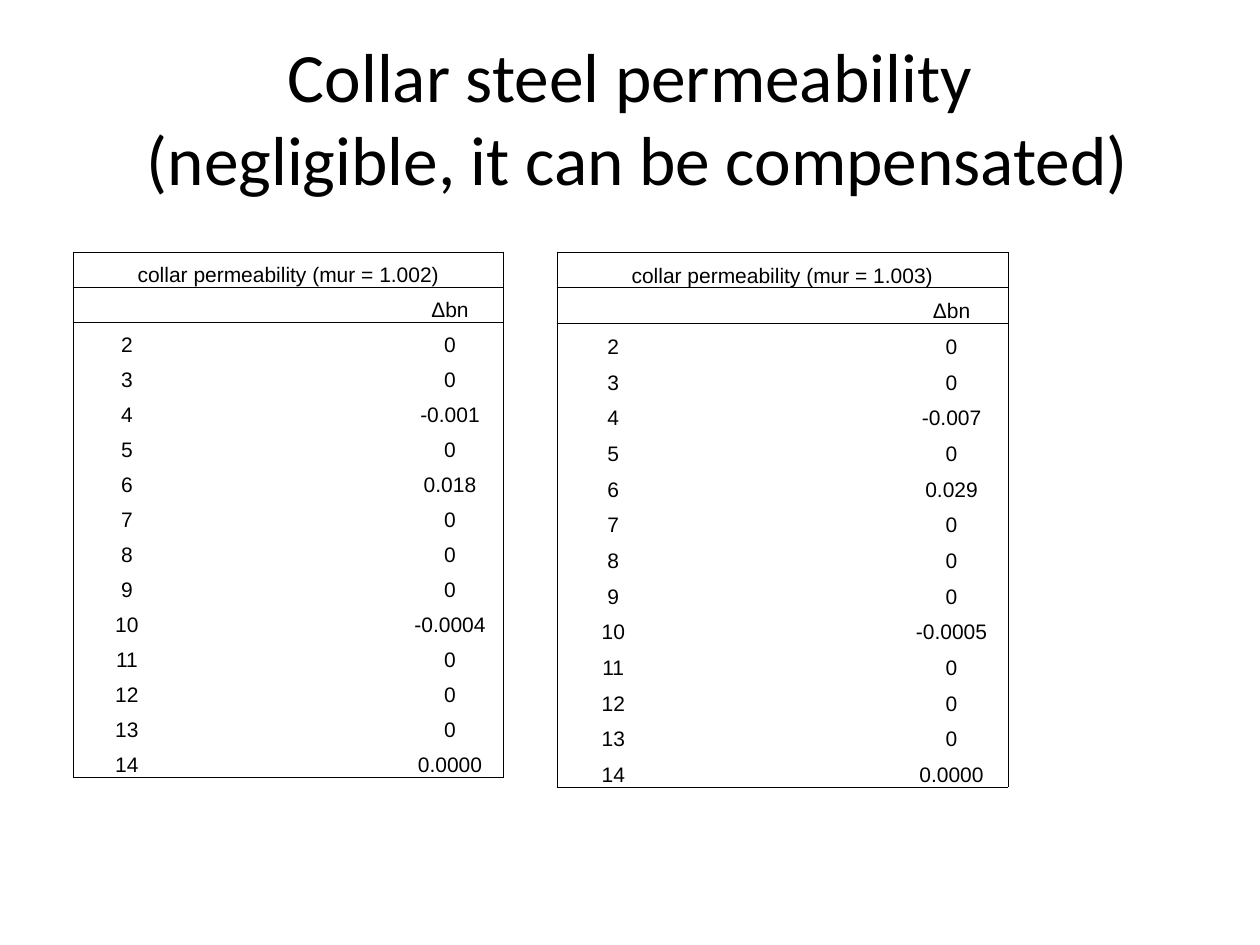
from lxml.etree import SubElement
from pptx import Presentation
from pptx.dml.color import RGBColor
from pptx.enum.text import MSO_ANCHOR, PP_ALIGN
from pptx.oxml.ns import qn
from pptx.util import Inches, Pt

COLORS = {"text": "000000", "border": "000000"}
NO_STYLE = "{2D5ABB26-0587-4C30-8999-92F81FD0307C}"
COLUMN_COUNT = 4
ORDERS = range(2, 15)


def style_paragraph(paragraph, font_name, size):
    paragraph.alignment = PP_ALIGN.CENTER
    paragraph.font.name = font_name
    paragraph.font.size = Pt(size)
    paragraph.font.color.rgb = RGBColor.from_string(COLORS["text"])


def add_borders(cell, sides):
    properties = cell._tc.get_or_add_tcPr()
    for side in sides:
        line = SubElement(properties, qn(f"a:ln{side}"), w=str(Pt(0.5)))
        fill = SubElement(line, qn("a:solidFill"))
        SubElement(fill, qn("a:srgbClr"), val=COLORS["border"])


def outline_sides(row, column, last_row):
    if row == 0:
        return "LRTB"
    edges = {
        "L": column == 0,
        "R": column == COLUMN_COUNT - 1,
        "T": row == 1,
        "B": row == last_row,
    }
    return [side for side, present in edges.items() if present]


def add_title(slide, left, top, width, height, text):
    title = slide.shapes.add_textbox(left, top, width, height).text_frame
    title.word_wrap = True
    title.vertical_anchor = MSO_ANCHOR.MIDDLE
    title.text = text
    style_paragraph(title.paragraphs[0], "Calibri", 39.6)


def add_permeability_table(slide, left, top, width, height, mur, harmonics):
    rows = [(f"collar permeability (mur = {mur})", ""), ("", "Δbn")]
    rows += [(str(order), harmonics.get(order, "0")) for order in ORDERS]
    table = slide.shapes.add_table(
        len(rows), COLUMN_COUNT, left, top, width, height
    ).table
    table.first_row = False
    table.horz_banding = False
    table._tbl.tblPr.find(qn("a:tableStyleId")).text = NO_STYLE

    for row, (first, last) in enumerate(rows):
        for column, text in enumerate((first, "", "", last)):
            cell = table.cell(row, column)
            cell.text = text
            cell.margin_left = cell.margin_right = 0
            cell.margin_top = cell.margin_bottom = 0
            cell.vertical_anchor = MSO_ANCHOR.BOTTOM
            style_paragraph(cell.text_frame.paragraphs[0], "Arial", 12)
            add_borders(cell, outline_sides(row, column, len(rows) - 1))
            cell.fill.background()
    table.cell(0, 0).merge(table.cell(0, COLUMN_COUNT - 1))


def main():
    presentation = Presentation()
    presentation.slide_width = Inches(10)
    presentation.slide_height = Inches(7.5)
    slide = presentation.slides.add_slide(presentation.slide_layouts[6])

    add_title(
        slide, Inches(0.5), Inches(0.3), Inches(9), Inches(1.25),
        "Collar steel permeability\v (negligible, it can be compensated)",
    )
    add_permeability_table(
        slide, Inches(0.58), Inches(2), Inches(3.42), Inches(4.17), "1.002",
        {4: "-0.001", 6: "0.018", 10: "-0.0004", 14: "0.0000"},
    )
    add_permeability_table(
        slide, Inches(4.42), Inches(2), Inches(3.58), Inches(4.25), "1.003",
        {4: "-0.007", 6: "0.029", 10: "-0.0005", 14: "0.0000"},
    )
    presentation.save("out.pptx")


if __name__ == "__main__":
    main()
